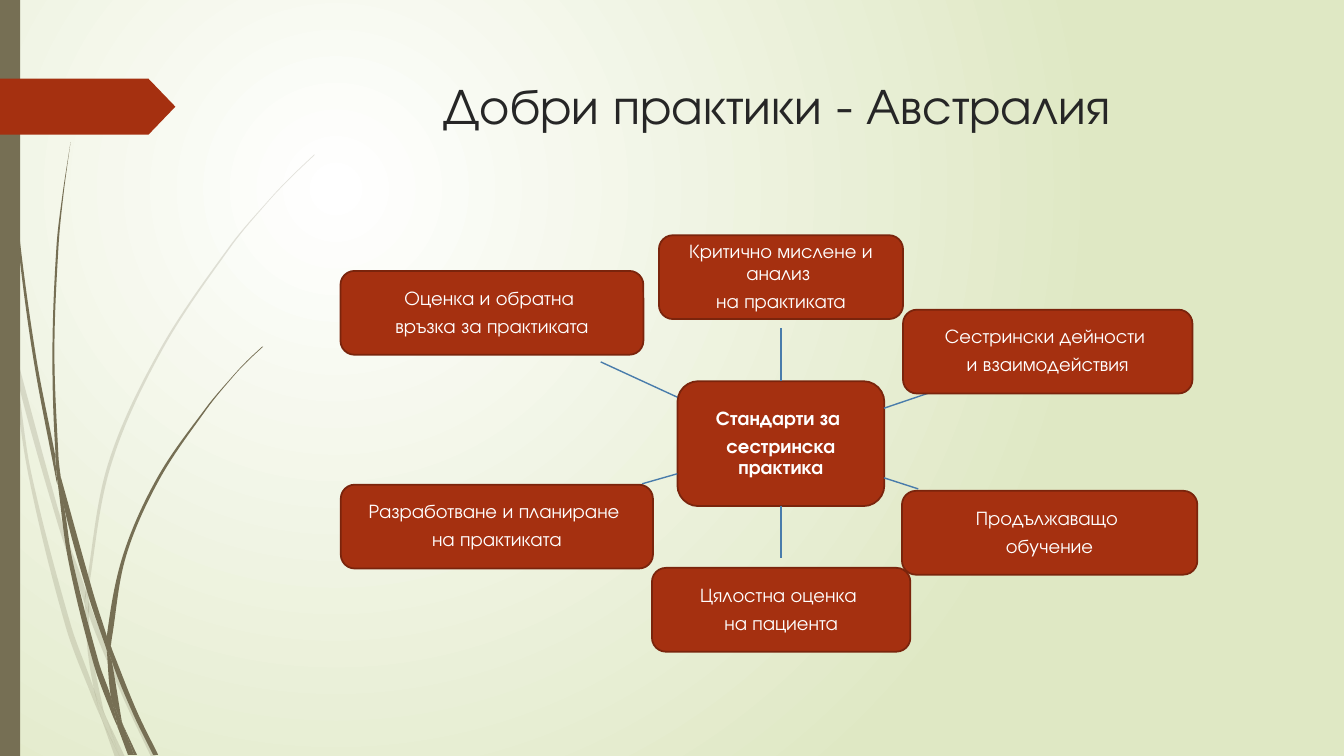
from itertools import pairwise

from lxml import etree
from pptx import Presentation
from pptx.dml.color import RGBColor
from pptx.enum import shapes, text
from pptx.oxml import ns
from pptx.util import Pt

# Content: all lengths in points
TITLE = ("Добри практики - Австралия", (204.1, 49.3, 702, 100.8))
HUB = (("Стандарти за ", "сестринска практика"), (483.9, 272.3, 147.8, 89.2))
NODE_HEIGHT = 59.9
# lines of text, (left, top, width), spoke from hub edge, spoke end
NODES = [
    (("Критично мислене и анализ ", "на практиката"),
     (470.7, 168, 174.4), (558, 272.2), (558, 234.5)),
    (("Сестрински дейности ", "и взаимодействия"),
     (645, 221.2, 206.8), (631.4, 291.6), (667.4, 279.4)),
    (("Продължаващо ", "обучение"),
     (644.3, 350.6, 211), (631.4, 341.3), (655.9, 349.2)),
    (("Цялостна оценка ", "на пациента"),
     (465.7, 405.6, 184.6), (558, 361.4), (558, 398.9)),
    (("Разработване и планиране ", "на практиката"),
     (243.4, 346.2, 223), (483.8, 338.4), (458.6, 345.6)),
    (("Оценка и обратна ", "връзка за практиката"),
     (243.2, 193.5, 216.4), (483.8, 283.7), (429.1, 258.5)),
]

# Grass: knots of each outline as (x, y) on a grid of 0.72 points
GRID = 0.72
PALE_GRASS = [
    [(11, 350), (9, 322), (0, 282), (0, 299), (10, 344)],
    [(58, 522), (84, 599), (85, 586), (62, 520), (14, 345), (17, 376)],
    [(92, 607), (88, 596), (88, 610), (123, 694), (150, 751), (155, 751), (127, 692)],
    [(119, 751), (124, 751), (105, 711)],
    [(93, 683), (70, 619), (31, 469), (17, 376), (11, 350), (28, 470), (65, 621),
     (92, 693), (101, 714), (99, 707)],
    [(84, 599), (87, 646), (93, 683), (96, 692), (105, 711), (103, 706), (91, 646),
     (88, 610), (88, 608)],
    [(88, 584), (110, 462), (160, 349), (229, 245), (268, 198), (290, 175), (312, 154),
     (312, 153), (289, 175), (268, 197), (228, 244), (158, 348), (107, 461), (85, 584),
     (85, 586), (88, 596)],
    [(101, 714), (114, 751), (119, 751)],
    [(88, 608), (88, 610), (88, 596), (85, 586), (84, 599)],
    [(96, 692), (93, 683), (99, 707), (101, 714), (119, 751), (105, 711)],
]
DARK_GRASS = [
    [(7, 110), (17, 233), (33, 355), (56, 477), (57, 481), (55, 457), (55, 453),
     (36, 355), (19, 232), (8, 109), (5, 48), (4, 0), (3, 0), (4, 48)],
    [(88, 592), (106, 645), (106, 633), (106, 631), (93, 590), (60, 472), (64, 505)],
    [(113, 649), (110, 641), (111, 656), (132, 708), (152, 749), (157, 749), (136, 706)],
    [(110, 691), (98, 657), (72, 556), (64, 505), (57, 477), (68, 557), (93, 659),
     (111, 708), (117, 722), (116, 717)],
    [(60, 472), (58, 453), (54, 349), (58, 245), (63, 193), (70, 141), (62, 193),
     (56, 245), (52, 349), (55, 449)],
    [(133, 749), (136, 749), (122, 719)],
    [(57, 477), (64, 505), (60, 472), (55, 449), (55, 453)],
    [(111, 633), (125, 552), (158, 476), (205, 406), (231, 374), (245, 359), (261, 344),
     (260, 344), (245, 358), (231, 373), (204, 405), (156, 474), (122, 551), (106, 631),
     (110, 641)],
    [(117, 722), (127, 749), (131, 749)],
    [(106, 645), (110, 691), (116, 706), (122, 719), (121, 716), (111, 656), (109, 651)],
    [(106, 645), (109, 651), (111, 656), (110, 641), (106, 631), (106, 633)],
    [(116, 706), (110, 691), (116, 717), (117, 722), (130, 749), (133, 749), (122, 719)],
]
CORNER = 0.8  # cosine below which a knot stays sharp

THEME = {
    "font": "TeX Gyre Adventor", "title_size": 36, "node_size": 14,
    "title": "262626", "node_text": "FFFFFF", "red": "A53010", "outline": "7A240C",
    "spoke": "497CAB", "olive": "766F54", "glow": "FFFFFF", "field": "DFE8C4",
}


def colour(name):
    return RGBColor.from_string(THEME[name])


def points(values):
    return [Pt(value) for value in values]


def style_run(run, size, name, bold=False):
    run.font.name = THEME["font"]
    run.font.size = Pt(THEME[size])
    run.font.bold = bold
    run.font.color.rgb = colour(name)


def paint(shape, fill, outline=None):
    shape.shadow.inherit = False
    shape.fill.solid()
    shape.fill.fore_color.rgb = colour(fill)
    if outline:
        shape.line.color.rgb = colour(outline)
        shape.line.width = Pt(1.25)
    else:
        shape.line.fill.background()


def bezier_segments(knots):
    """Control points and end of each curve round the closed outline."""
    loop = [complex(*knot) for knot in [knots[-1], *knots, *knots[:2]]]
    segments = []
    for before, start, end, after in zip(loop, loop[1:], loop[2:], loop[3:]):
        chord = end - start
        arrive, leave = chord, chord
        for neighbour, across in ((start - before, end - before),
                                  (after - end, after - start)):
            turn = chord / neighbour
            if turn.real / abs(turn) > CORNER:
                tangent = across / abs(across) * abs(chord)
                if neighbour == start - before:
                    leave = tangent
                else:
                    arrive = tangent
        segments.append((start + leave / 3, end - arrive / 3, end))
    return segments


def add_grass(slide, knots, opacity=None):
    outline = [points((x * GRID, y * GRID)) for x, y in knots]
    builder = slide.shapes.build_freeform(*outline[0], scale=1.0)
    builder.add_line_segments(outline[1:] + outline[:1], close=True)
    grass = builder.convert_to_shape()
    paint(grass, "olive")
    # Bend the straight sides
    sides = list(grass.element.iter(ns.qn("a:lnTo")))
    for side, segment in zip(sides, bezier_segments(outline)):
        curve = etree.Element(ns.qn("a:cubicBezTo"))
        for spot in segment:
            etree.SubElement(curve, ns.qn("a:pt"), x=str(round(spot.real - grass.left)),
                             y=str(round(spot.imag - grass.top)))
        side.getparent().replace(side, curve)
    if opacity:
        tint = grass.element.spPr.find(".//" + ns.qn("a:srgbClr"))
        etree.SubElement(tint, ns.qn("a:alpha"), val=str(opacity * 1000))


def add_node(slide, lines, box, bold=False):
    node = slide.shapes.add_shape(shapes.MSO_SHAPE.ROUNDED_RECTANGLE, *points(box))
    paint(node, "red", "outline")
    frame = node.text_frame
    frame.word_wrap = True
    frame.vertical_anchor = text.MSO_ANCHOR.MIDDLE
    frame.margin_left = frame.margin_right = Pt(3)
    frame.margin_top = frame.margin_bottom = Pt(3)
    for i, line in enumerate(lines):
        paragraph = frame.add_paragraph() if i else frame.paragraphs[0]
        paragraph.alignment = text.PP_ALIGN.CENTER
        paragraph.line_spacing = 0.9
        paragraph.space_after = Pt(4.9)
        run = paragraph.add_run()
        run.text = line
        style_run(run, "node_size", "node_text", bold)


def add_spoke(slide, start, end):
    spoke = slide.shapes.add_connector(
        shapes.MSO_CONNECTOR.STRAIGHT, *points(start + end))
    spoke.line.color.rgb = colour("spoke")
    spoke.line.width = Pt(1)
    etree.SubElement(spoke.element.spPr, ns.qn("a:effectLst"))


def set_background(slide):
    fill = slide.background.fill
    fill.gradient()
    for stop, name in zip(fill.gradient_stops, ("glow", "field")):
        stop.color.rgb = colour(name)
    linear = slide.element.find(".//" + ns.qn("a:lin"))
    radial = etree.Element(ns.qn("a:path"), path="circle")
    etree.SubElement(radial, ns.qn("a:fillToRect"),
                     l="50000", t="50000", r="100000", b="100000")
    linear.getparent().replace(linear, radial)


def main():
    presentation = Presentation()
    presentation.slide_width, presentation.slide_height = Pt(960), Pt(540)
    slide = presentation.slides.add_slide(presentation.slide_layouts[6])
    set_background(slide)

    # Grass, side bar and banner
    for knots in PALE_GRASS:
        add_grass(slide, knots, opacity=20)
    for knots in DARK_GRASS:
        add_grass(slide, knots)
    bar = slide.shapes.add_shape(shapes.MSO_SHAPE.RECTANGLE, *points((0, 0, 14.4, 540)))
    paint(bar, "olive")
    banner = slide.shapes.add_shape(
        shapes.MSO_SHAPE.PENTAGON, *points((0, 56.2, 125.3, 40)))
    banner.adjustments[0] = 0.48
    paint(banner, "red")

    # Title
    wording, box = TITLE
    title = slide.shapes.add_textbox(*points(box))
    title.text_frame.word_wrap = True
    paragraph = title.text_frame.paragraphs[0]
    paragraph.alignment = text.PP_ALIGN.CENTER
    run = paragraph.add_run()
    run.text = wording
    style_run(run, "title_size", "title")

    # Hub with its spokes and nodes
    add_node(slide, *HUB, bold=True)
    for lines, place, start, end in NODES:
        add_spoke(slide, start, end)
        add_node(slide, lines, (*place, NODE_HEIGHT))

    presentation.save("out.pptx")


if __name__ == "__main__":
    main()
